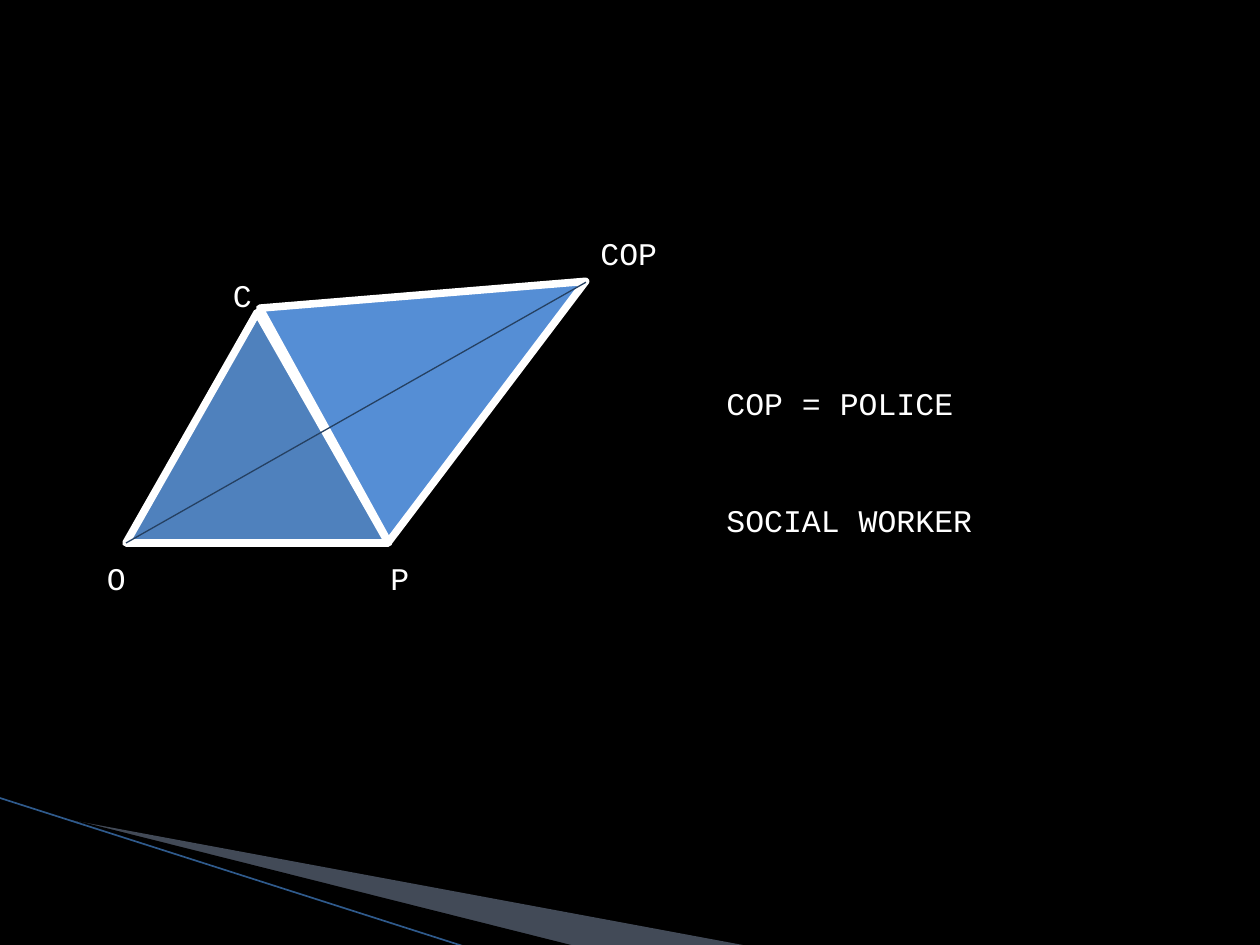
from lxml.etree import SubElement
from pptx import Presentation
from pptx.dml.color import RGBColor
from pptx.enum.shapes import MSO_CONNECTOR, MSO_SHAPE
from pptx.oxml.ns import qn
from pptx.util import Pt

COLORS = {
    "black": "000000",
    "white": "FFFFFF",
    "wedge": "A7B9DB",
    "sweep": "2F5A8C",
    "left": "4F81BD",
    "right": "558ED5",
    "diagonal": "254061",
}


def rgb(name):
    return RGBColor.from_string(COLORS[name])


def add_polygon(s, points, color, alpha=None):
    corners = [(Pt(x), Pt(y)) for x, y in points]
    builder = s.shapes.build_freeform(*corners[0])
    builder.add_line_segments(corners[1:], close=True)
    sp = builder.convert_to_shape()
    sp.shadow.inherit = False
    sp.fill.solid()
    sp.fill.fore_color.rgb = rgb(color)
    sp.line.fill.background()
    if alpha is not None:
        clr = sp.fill._xPr.find(qn("a:solidFill"))[0]
        SubElement(clr, qn("a:alpha"), val=str(alpha * 1000))


def add_triangle(s, x, y, w, h, color, rotation=0):
    sp = s.shapes.add_shape(MSO_SHAPE.ISOSCELES_TRIANGLE, Pt(x), Pt(y), Pt(w), Pt(h))
    sp.rotation = rotation
    sp.shadow.inherit = False
    sp.fill.solid()
    sp.fill.fore_color.rgb = rgb(color)
    sp.line.color.rgb = rgb("white")
    sp.line.width = Pt(4.33)


def add_line(s, x1, y1, x2, y2, color, width):
    line = s.shapes.add_connector(MSO_CONNECTOR.STRAIGHT, Pt(x1), Pt(y1), Pt(x2), Pt(y2))
    line.line.color.rgb = rgb(color)
    line.line.width = Pt(width)
    SubElement(line._element.spPr, qn("a:effectLst"))


def add_text(s, lines, x, y, w, h=29, *, size=18, font="Courier New", color="white", gap=0):
    tf = s.shapes.add_textbox(Pt(x), Pt(y), Pt(w), Pt(h)).text_frame
    tf.word_wrap = True
    for i, text in enumerate(lines):
        p = tf.paragraphs[0] if i == 0 else tf.add_paragraph()
        if i:
            p.space_before = Pt(gap)
        r = p.add_run()
        r.text = text
        r.font.name = font
        r.font.size = Pt(size)
        r.font.color.rgb = rgb(color)


def main():
    prs = Presentation()
    prs.slide_width, prs.slide_height = Pt(720), Pt(540)
    s = prs.slides.add_slide(prs.slide_layouts[6])
    s.background.fill.solid()
    s.background.fill.fore_color.rgb = rgb("black")

    # Corner decoration
    add_polygon(s, [(39.6, 468.4), (428.4, 540.7), (328.3, 540.7)], "wedge", alpha=40)
    add_polygon(s, [(38.4, 467.6), (329, 540.7), (268, 541.4)], "black")
    add_line(s, -0.7, 455.8, 267, 541.4, "sweep", 0.95)

    # Parallelogram of two triangles with its diagonal
    add_triangle(s, 72, 178.5, 150, 131.8, "left")
    add_triangle(s, 183.6, 116.6, 152.6, 170.6, "right", rotation=61.2)
    add_line(s, 72, 310.3, 334.8, 161.3, "diagonal", 0.75)

    # Corner labels
    for label, x, y, w in [
        ("C", 126, 154, 36),
        ("O", 54, 316, 24),
        ("P", 216, 316, 30),
        ("COP", 336, 130, 60),
    ]:
        add_text(s, [label], x, y, w)

    # Meaning
    add_text(s, ["COP = POLICE", "SOCIAL WORKER"], 408, 216, 300, 94, gap=45)

    prs.save("out.pptx")


if __name__ == "__main__":
    main()
